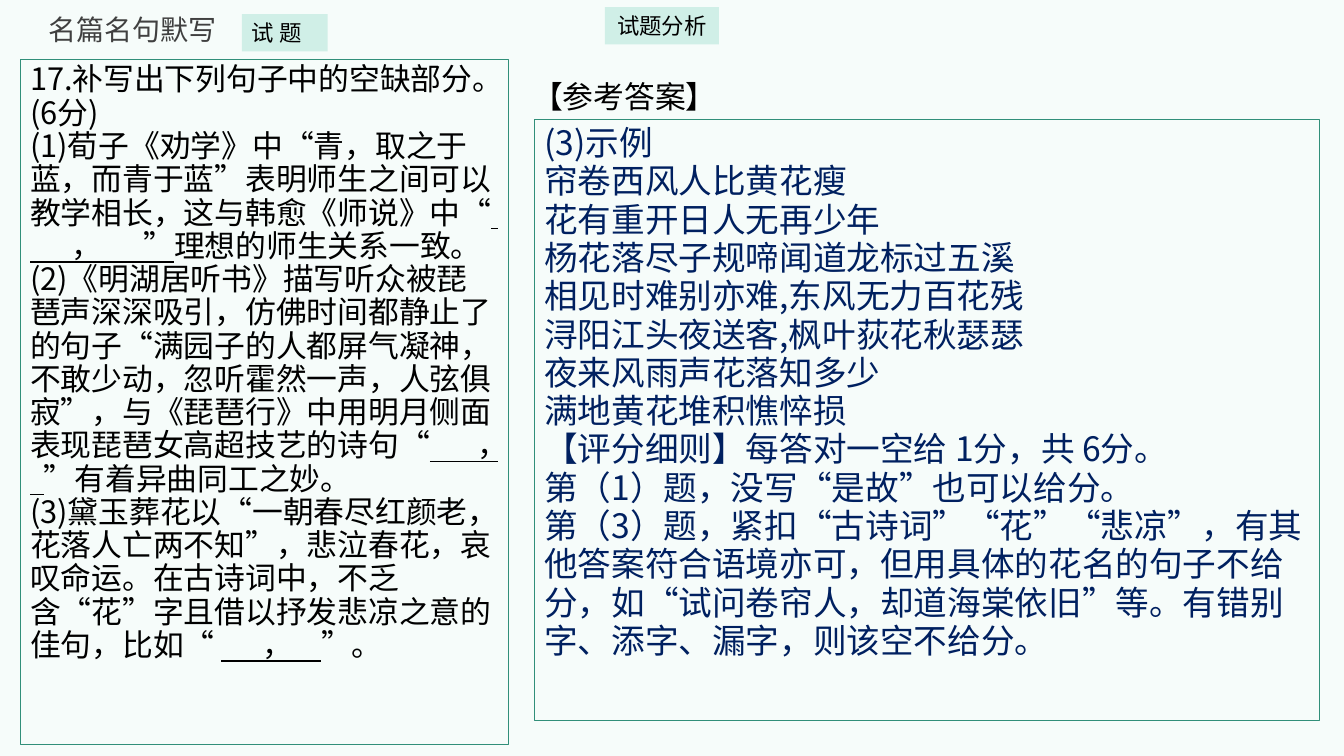
from pptx import Presentation
from pptx.dml.color import RGBColor
from pptx.enum.lang import MSO_LANGUAGE_ID as Lang
from pptx.enum.shapes import MSO_SHAPE as Shape
from pptx.enum.text import MSO_ANCHOR as Anchor, PP_ALIGN as Align
from pptx.oxml import parse_xml
from pptx.oxml.ns import nsdecls
from pptx.util import Inches, Pt

CJK_FONT = "Noto Sans CJK SC"


def color(hex_value):
    return RGBColor.from_string(hex_value)


class ExamSlide:
    """Holds the style and the current slide."""

    mint, green, background = "D0EFE7", "318F79", "F6FCFA"

    def __init__(self, deck):
        self.slide = deck.slides.add_slide(deck.slide_layouts[6])
        fill = self.slide.background.fill
        fill.solid()
        fill.fore_color.rgb = color(self.background)

    def set_text(self, shape, paragraphs, size, ink="000000", font=CJK_FONT,
                 spacing=1.0, align=Align.LEFT, anchor=Anchor.TOP):
        """Fill a shape with text; parts between bars are underlined."""
        frame = shape.text_frame
        frame.word_wrap = True
        frame.vertical_anchor = anchor
        for number, text in enumerate(paragraphs):
            paragraph = frame.add_paragraph() if number else frame.paragraphs[0]
            paragraph.alignment = align
            paragraph.line_spacing = spacing
            for position, part in enumerate(text.split("|")):
                run = paragraph.add_run()
                run.text = part
                style = {"size": Pt(size), "name": font, "underline": position % 2 == 1,
                         "language_id": Lang.SIMPLIFIED_CHINESE}
                for name, value in style.items():
                    setattr(run.font, name, value)
                run.font.color.rgb = color(ink)
                latin = run.font._element.find(".//{*}latin")
                latin.addnext(parse_xml(f'<a:ea {nsdecls("a")} typeface="{CJK_FONT}"/>'))

    def rectangle(self, box):
        shape = self.slide.shapes.add_shape(Shape.RECTANGLE, *map(Inches, box))
        shape.shadow.inherit = False
        return shape

    def tag(self, box, text, align=Align.LEFT):
        shape = self.rectangle(box)
        shape.fill.solid()
        shape.fill.fore_color.rgb = color(self.mint)
        shape.line.fill.background()
        self.set_text(shape, [text], 16, align=align, anchor=Anchor.MIDDLE)

    def panel(self, box, paragraphs, size, **style):
        shape = self.rectangle(box)
        shape.fill.background()
        shape.line.color.rgb = color(self.green)
        shape.line.width = Pt(0.75)
        self.set_text(shape, paragraphs, size, **style)

    def heading(self, box, text, size, **style):
        shape = self.slide.shapes.add_textbox(*map(Inches, box))
        self.set_text(shape, [text], size, **style)


QUESTION = [
    "17.补写出下列句子中的空缺部分。(6分)",
    "(1)荀子《劝学》中“青，取之于蓝，而青于蓝”表明师生之间可以教学相长，"
    "这与韩愈《师说》中“|        ，      ”|理想的师生关系一致。",
    "(2)《明湖居听书》描写听众被琵琶声深深吸引，仿佛时间都静止了的句子"
    "“满园子的人都屏气凝神，不敢少动，忽听霍然一声，人弦俱寂”，"
    "与《琵琶行》中用明月侧面表现琵琶女高超技艺的诗句“|       ，  |”有着异曲同工之妙。",
    "(3)黛玉葬花以“一朝春尽红颜老，花落人亡两不知”，悲泣春花，哀叹命运。"
    "在古诗词中，不乏含“花”字且借以抒发悲凉之意的佳句，比如“ |      ，    |”。",
]

ANSWER = [
    "(3)示例",
    "帘卷西风人比黄花瘦",
    "花有重开日人无再少年",
    "杨花落尽子规啼闻道龙标过五溪",
    "相见时难别亦难,东风无力百花残",
    "浔阳江头夜送客,枫叶荻花秋瑟瑟",
    "夜来风雨声花落知多少",
    "满地黄花堆积憔悴损",
    "【评分细则】每答对一空给 1分，共 6分。",
    "第（1）题，没写“是故”也可以给分。",
    "第（3）题，紧扣“古诗词”“花”“悲凉”，有其他答案符合语境亦可，"
    "但用具体的花名的句子不给分，如“试问卷帘人，却道海棠依旧”等。"
    "有错别字、添字、漏字，则该空不给分。",
]


def main():
    deck = Presentation()
    deck.slide_width, deck.slide_height = Inches(13.33), Inches(7.5)
    exam = ExamSlide(deck)

    # Title and section tags
    exam.tag((2.4, 0.14, 0.85, 0.37), "试 题")
    exam.tag((6, 0.07, 1.13, 0.37), "试题分析", Align.CENTER)
    exam.heading((0.38, 0.07, 2.34, 0.44), "名篇名句默写", 20, ink="404040")

    # Question on the left
    exam.panel((0.2, 0.59, 4.84, 6.8), QUESTION, 22, spacing=0.9)

    # Answer and marking rules on the right
    exam.heading((5.18, 0.72, 7.69, 0.47), "【参考答案】", 22, font="Arial")
    exam.panel((5.3, 1.19, 7.79, 5.96), ANSWER, 24, ink="002060", spacing=0.95)

    deck.save("out.pptx")


if __name__ == "__main__":
    main()
